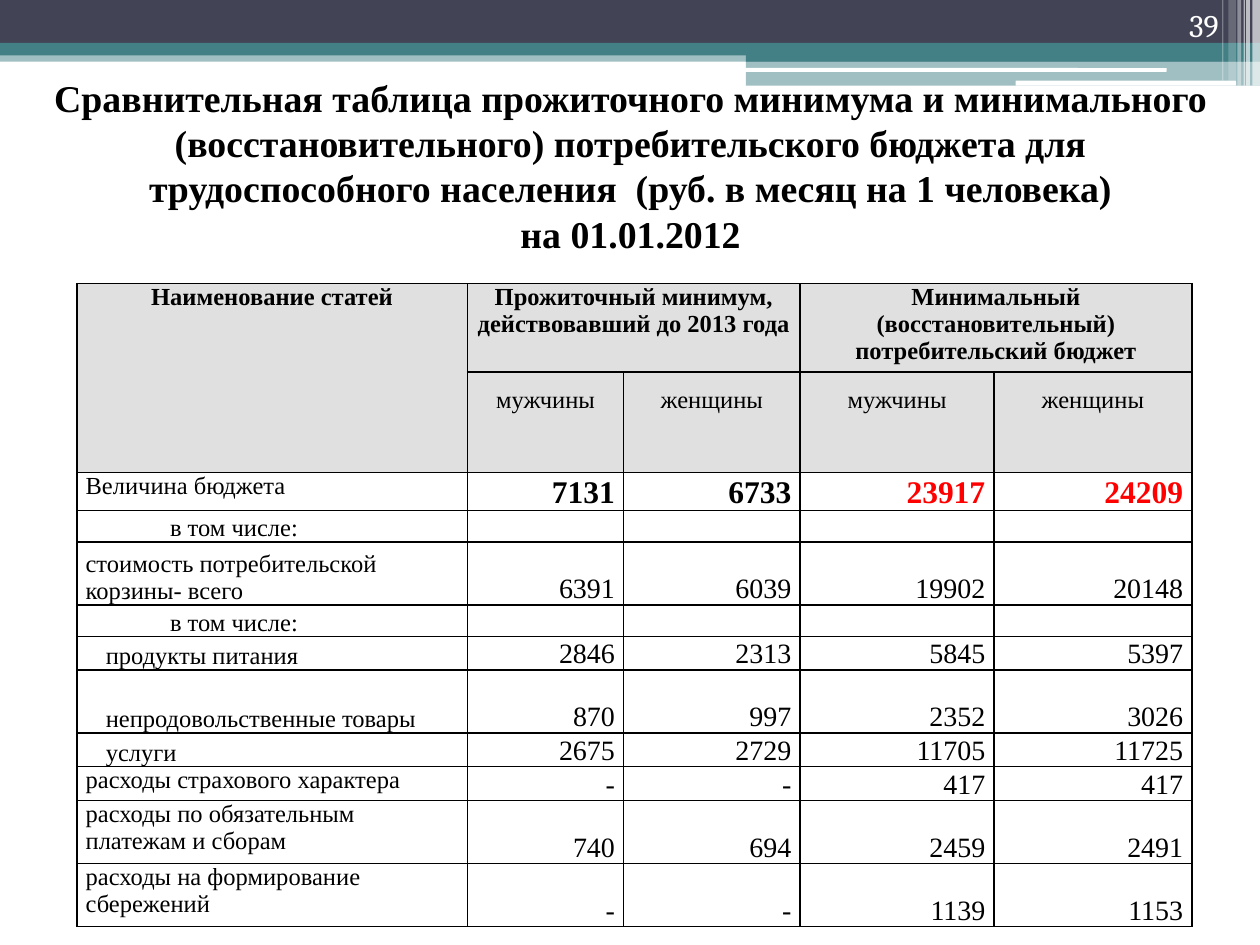
from dataclasses import dataclass

from lxml import etree
from pptx import Presentation
from pptx import util as u
from pptx.dml.color import RGBColor
from pptx.enum import shapes, text
from pptx.oxml import ns

COLORS = {
    "navy": "424456", "teal": "438086", "white": "FFFFFF",
    "black": "000000", "red": "FF0000", "header": "E0E0E0",
}
SERIF = "Times New Roman"
LEFT, CENTER, RIGHT = text.PP_ALIGN.LEFT, text.PP_ALIGN.CENTER, text.PP_ALIGN.RIGHT
TOP, MIDDLE, BOTTOM = text.MSO_ANCHOR.TOP, text.MSO_ANCHOR.MIDDLE, text.MSO_ANCHOR.BOTTOM


@dataclass
class Band:
    left: float
    top: float
    width: float
    height: float
    color: str
    opacity: int = 100
    rounded: bool = False


@dataclass
class Row:
    label: str
    values: tuple = ("", "", "", "")
    height: float = 0.25
    anchor: int = BOTTOM
    margin: float = 0
    indent: float = 0


BANDS = [
    Band(0, 0.4, 10, 0.09, "teal", 50),
    Band(0, 0, 10, 0.34, "navy"),
    Band(0, 0.34, 10, 0.1, "teal"),
    Band(5.92, 0.39, 4.08, 0.1, "teal"),
    Band(5.92, 0.48, 4.08, 0.2, "teal", 50),
    Band(5.91, 0.54, 3.35, 0.03, "white", rounded=True),
    Band(8.06, 0.64, 1.75, 0.04, "white", rounded=True),
    Band(9.94, 0, 0.06, 0.68, "white", 65),
    Band(9.89, 0, 0.03, 0.68, "white", 65),
    Band(9.87, 0, 0.01, 0.68, "white", 60),
    Band(9.82, 0, 0.03, 0.68, "white", 40),
    Band(9.75, 0, 0.06, 0.64, "white", 20),
    Band(9.7, 0, 0.01, 0.64, "white", 30),
]

TITLE = ("Сравнительная таблица прожиточного минимума и минимального "
         "(восстановительного) потребительского бюджета для трудоспособного "
         "населения  (руб. в месяц на 1 человека)\vна 01.01.2012")
COLUMN_WIDTHS = [3.1, 1.24, 1.4, 1.54, 1.57]
HEADER_HEIGHTS = [0.65, 0.8]
HEADINGS = {
    0: "Наименование статей",
    1: "Прожиточный минимум, действовавший до 2013 года",
    3: "Минимальный (восстановительный) потребительский бюджет",
}
ROWS = [
    Row("Величина бюджета", ("7131", "6733", "23917", "24209"), 0.28, TOP),
    Row("в том числе:", indent=0.67),
    Row("стоимость потребительской корзины- всего",
        ("6391", "6039", "19902", "20148"), 0.5),
    Row("в том числе:", indent=0.67),
    Row("продукты питания", ("2846", "2313", "5845", "5397"), margin=0.16),
    Row("непродовольственные товары", ("870", "997", "2352", "3026"), 0.5, margin=0.16),
    Row("услуги", ("2675", "2729", "11705", "11725"), margin=0.16),
    Row("расходы страхового характера", ("-", "-", "417", "417"), anchor=TOP),
    Row("расходы по обязательным платежам и сборам",
        ("740", "694", "2459", "2491"), 0.5, TOP),
    Row("расходы на формирование сбережений", ("-", "-", "1139", "1153"), 0.5, TOP),
]


def rgb(name: str) -> RGBColor:
    return RGBColor.from_string(COLORS[name])


def write(frame, content: str, *, size: float = 14, bold: bool = False,
          color: str = "black", font: str = SERIF, align=LEFT, spacing=None,
          margin: float = 0, indent: float = 0) -> None:
    frame.word_wrap = True
    paragraph = frame.paragraphs[0]
    paragraph.text = content
    paragraph.alignment = align
    if spacing:
        paragraph.line_spacing = u.Pt(spacing)
    if margin or indent:
        properties = paragraph._p.get_or_add_pPr()
        properties.set("marL", str(u.Inches(margin)))
        properties.set("indent", str(u.Inches(indent)))
    for run in paragraph.runs:
        run.font.name = font
        run.font.size = u.Pt(size)
        run.font.bold = bold
        run.font.color.rgb = rgb(color)
    if not content:
        # An empty cell needs its size too, or it stretches the row
        etree.SubElement(paragraph._p, ns.qn("a:endParaRPr"), sz=str(int(size * 100)))


def add_band(slide, band: Band) -> None:
    kind = (shapes.MSO_SHAPE.ROUNDED_RECTANGLE if band.rounded
            else shapes.MSO_SHAPE.RECTANGLE)
    shape = slide.shapes.add_shape(kind, u.Inches(band.left), u.Inches(band.top),
                                   u.Inches(band.width), u.Inches(band.height))
    shape.shadow.inherit = False
    shape.line.fill.background()
    shape.fill.solid()
    shape.fill.fore_color.rgb = rgb(band.color)
    if band.opacity < 100:
        color = shape._element.spPr.find(".//" + ns.qn("a:srgbClr"))
        etree.SubElement(color, ns.qn("a:alpha"), val=str(band.opacity * 1000))


def add_label(slide, left: float, top: float, width: float, height: float,
              content: str, anchor, **style) -> None:
    box = slide.shapes.add_textbox(u.Inches(left), u.Inches(top),
                                   u.Inches(width), u.Inches(height))
    box.text_frame.vertical_anchor = anchor
    write(box.text_frame, content, **style)


def prepare_cell(cell, header: bool) -> None:
    cell.margin_left = cell.margin_right = u.Inches(0.07)
    cell.margin_top = cell.margin_bottom = 0
    if header:
        cell.fill.solid()
        cell.fill.fore_color.rgb = rgb("header")
    else:
        cell.fill.background()
    properties = cell._tc.get_or_add_tcPr()
    for position, side in enumerate(("lnL", "lnR", "lnT", "lnB")):
        line = etree.Element(ns.qn("a:" + side), w=str(u.Pt(1)))
        fill = etree.SubElement(line, ns.qn("a:solidFill"))
        etree.SubElement(fill, ns.qn("a:srgbClr"), val=COLORS["black"])
        properties.insert(position, line)


def add_budget_table(slide) -> None:
    heights = HEADER_HEIGHTS + [row.height for row in ROWS]
    table = slide.shapes.add_table(
        len(heights), len(COLUMN_WIDTHS), u.Inches(0.61), u.Inches(2.25),
        u.Inches(sum(COLUMN_WIDTHS)), u.Inches(sum(heights))).table
    for column, width in zip(table.columns, COLUMN_WIDTHS):
        column.width = u.Inches(width)
    for number, height in enumerate(heights):
        table.rows[number].height = u.Inches(height)
        for column in range(len(COLUMN_WIDTHS)):
            prepare_cell(table.cell(number, column), number < len(HEADER_HEIGHTS))

    # Two-level header
    table.cell(0, 0).merge(table.cell(1, 0))
    for column in (1, 3):
        table.cell(0, column).merge(table.cell(0, column + 1))
    for column, heading in HEADINGS.items():
        write(table.cell(0, column).text_frame, heading, bold=True, align=CENTER)
    for column in range(1, 5):
        cell = table.cell(1, column)
        cell.margin_top = u.Inches(0.17)
        write(cell.text_frame, "мужчины" if column % 2 else "женщины",
              align=CENTER, spacing=12)

    # Budget items, with the total row emphasised
    for number, row in enumerate(ROWS):
        cells = table.rows[number + len(HEADER_HEIGHTS)].cells
        total = number == 0
        cells[0].vertical_anchor = row.anchor
        write(cells[0].text_frame, row.label, margin=row.margin, indent=row.indent)
        for column, value in enumerate(row.values, start=1):
            cell = cells[column]
            cell.vertical_anchor = BOTTOM
            write(cell.text_frame, value, align=RIGHT, bold=total,
                  size=18 if total else 16 if value else 14,
                  color="red" if total and column > 2 else "black")


def main() -> None:
    presentation = Presentation()
    presentation.slide_width, presentation.slide_height = u.Inches(10), u.Inches(7.5)
    slide = presentation.slides.add_slide(presentation.slide_layouts[6])
    for band in BANDS:
        add_band(slide, band)
    add_label(slide, 0.24, 0.6, 9.53, 1.42, TITLE, MIDDLE,
              size=21.6, bold=True, align=CENTER, spacing=25.9)
    add_budget_table(slide)
    # Slide number
    add_label(slide, 8.94, 0, 0.83, 0.4, "39", BOTTOM,
              size=18, font="Cambria", color="white", align=RIGHT)
    presentation.save("out.pptx")


if __name__ == "__main__":
    main()
